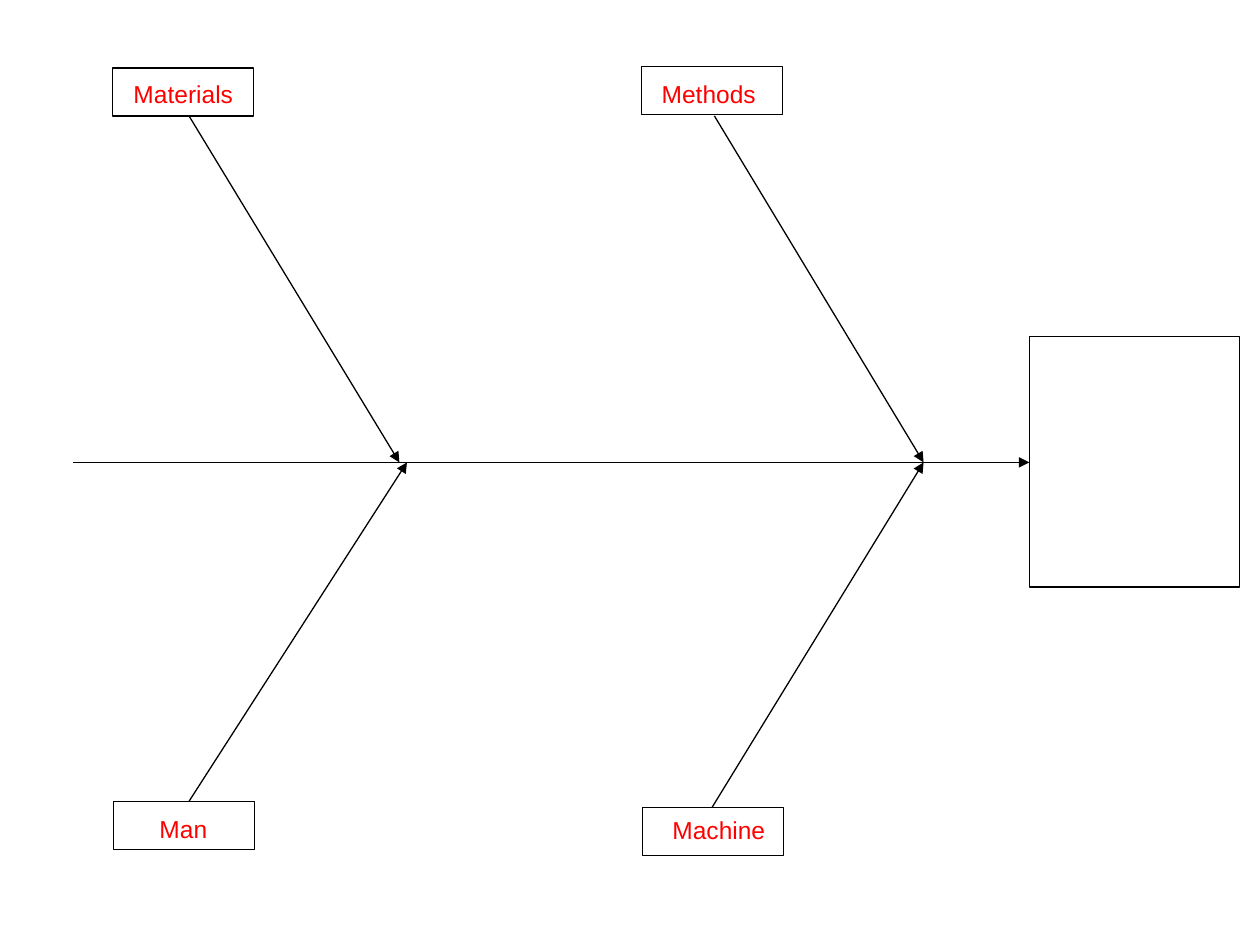
"""Builds a fishbone (cause and effect) diagram slide."""
import pptx
import pptx.dml.color
import pptx.enum.shapes
import pptx.enum.text
import pptx.oxml
import pptx.oxml.ns
import pptx.util

Inches = pptx.util.Inches
Pt = pptx.util.Pt

COLORS = {"line": "000000", "label": "FF0000"}
LINE_WIDTH = 0.75
SPINE_Y = 3.67
SPINE_START = 0.58
HEAD = (8.17, 2.67, 1.67, 1.99)
CAUSE_SIZE = (1.12, 0.38)
LABEL_SIZE = (1.25, 0.34)

# name, box corner, label corner, bone start, x where the bone meets the spine
CAUSES = [
    ("Materials", (0.89, 0.54), (0.83, 0.58), (1.5, 0.92), 3.17),
    ("Man", (0.9, 6.36), (0.83, 6.41), (1.5, 6.36), 3.23),
    ("Methods", (5.09, 0.53), (5, 0.58), (5.67, 0.92), 7.33),
    ("Machine", (5.1, 6.41), (5.08, 6.42), (5.65, 6.41), 7.33),
]


def color(name):
    return pptx.dml.color.RGBColor.from_string(COLORS[name])


def style_line(line):
    line.color.rgb = color("line")
    line.width = Pt(LINE_WIDTH)


def add_frame(page, left, top, width, height):
    frame = page.shapes.add_shape(
        pptx.enum.shapes.MSO_SHAPE.RECTANGLE,
        Inches(left), Inches(top), Inches(width), Inches(height))
    frame.shadow.inherit = False
    frame.fill.background()
    style_line(frame.line)


def add_arrow(page, start, end):
    arrow = page.shapes.add_connector(
        pptx.enum.shapes.MSO_CONNECTOR.STRAIGHT,
        *(Inches(value) for value in (*start, *end)))
    style_line(arrow.line)
    namespace = pptx.oxml.ns.nsdecls("a")
    arrow.line._get_or_add_ln().append(
        pptx.oxml.parse_xml(f'<a:tailEnd {namespace} type="triangle"/>'))
    arrow._element.spPr.append(
        pptx.oxml.parse_xml(f"<a:effectLst {namespace}/>"))


def add_label(page, text, left, top, width, height):
    box = page.shapes.add_textbox(
        Inches(left), Inches(top), Inches(width), Inches(height))
    box.text_frame.word_wrap = True
    para = box.text_frame.paragraphs[0]
    para.alignment = pptx.enum.text.PP_ALIGN.CENTER
    span = para.add_run()
    span.text = text
    span.font.name = "Arial"
    span.font.size = Pt(14)
    span.font.color.rgb = color("label")


def main():
    deck = pptx.Presentation()
    deck.slide_width = Inches(10)
    deck.slide_height = Inches(7.5)
    page = deck.slides.add_slide(deck.slide_layouts[6])

    add_arrow(page, (SPINE_START, SPINE_Y), (HEAD[0], SPINE_Y))
    add_frame(page, *HEAD)
    for name, frame_corner, label_corner, bone_start, joint_x in CAUSES:
        add_frame(page, *frame_corner, *CAUSE_SIZE)
        add_arrow(page, bone_start, (joint_x, SPINE_Y))
        add_label(page, name, *label_corner, *LABEL_SIZE)

    deck.save("out.pptx")


if __name__ == "__main__":
    main()
